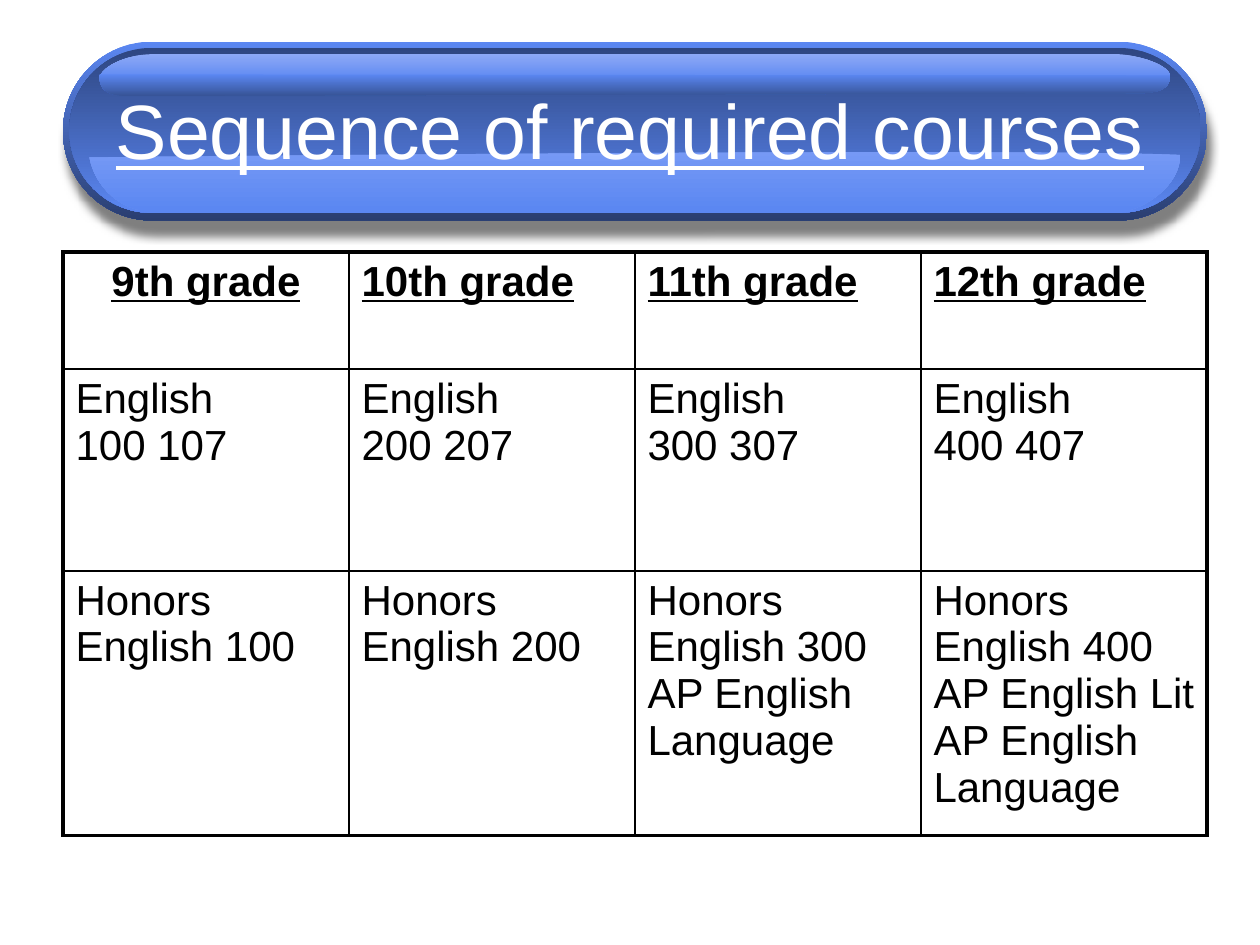
import pptx
import pptx.util
import pptx.dml.color
import pptx.enum.shapes
import pptx.enum.text
import pptx.oxml
import pptx.oxml.ns

Inches = pptx.util.Inches
Align = pptx.enum.text.PP_ALIGN
qn = pptx.oxml.ns.qn

TITLE = "Sequence of required courses"
COURSES = [
    [["9th grade"], ["10th grade"], ["11th grade"], ["12th grade"]],
    [["English", "100 107"], ["English", "200 207"],
     ["English", "300 307"], ["English", "400 407"]],
    [["Honors English 100"], ["Honors English 200"],
     ["Honors English 300", "AP English Language"],
     ["Honors English 400 AP English Lit", "AP English Language"]],
]
ROW_HEIGHTS = [0.93, 1.6, 2.1]
LEFT, TABLE_TOP, WIDTH = 0.5, 2, 9.08
CAPSULES = [
    ((LEFT, 0.33, WIDTH, 1.42), ("5B87F2", "2A3E70")),
    ((0.55, 0.38, 8.98, 1.31), ("2E4681", "5B87F2")),
]
GLOSSES = [
    (("8CA8F6", "5B87F2"), (0.79, 0.61), [
        [(0.84, 0.5), (1.05, 0.43), (1.21, 0.43)], [(8.88, 0.43)],
        [(9.03, 0.44), (9.28, 0.51), (9.29, 0.61)],
        [(7.94, 0.64), (0.79, 0.61), (0.79, 0.61)]]),
    (("5B87F2", "375497"), (0.79, 0.59), [
        [(0.78, 0.72), (0.86, 0.76), (1.02, 0.76)], [(9.06, 0.74)],
        [(9.21, 0.73), (9.28, 0.71), (9.29, 0.6)]]),
    (("789BF5", "5B87F2"), (0.71, 1.25), [
        [(0.76, 1.5), (0.97, 1.66), (1.14, 1.67)], [(8.95, 1.67)],
        [(9.1, 1.64), (9.36, 1.48), (9.37, 1.23)],
        [(8, 1.17), (0.71, 1.25), (0.71, 1.25)]]),
]


def color(value):
    return pptx.dml.color.RGBColor.from_string(value)


def xml(text):
    return pptx.oxml.parse_xml(text.replace(" ", f" {pptx.oxml.ns.nsdecls('a')} ", 1))


def paint(shape, colors):
    shape.shadow.inherit = False
    shape.line.fill.background()
    shape.fill.gradient()
    shape.fill.gradient_angle = 270
    for stop, value in zip(shape.fill.gradient_stops, colors):
        stop.color.rgb = color(value)


def cast_shadow(shape):
    effects = shape.element.spPr.find(qn("a:effectLst"))
    effects.append(xml(
        f'<a:outerShdw blurRad="{pptx.util.Pt(5)}" dist="{pptx.util.Pt(9.2)}" '
        f'dir="{77 * 60000}" algn="ctr" rotWithShape="0"><a:srgbClr val="000000">'
        '<a:alpha val="50000"/></a:srgbClr></a:outerShdw>'))


def add_curved_shape(page, start, segments):
    points = [point for segment in segments for point in segment]
    builder = page.shapes.build_freeform(*map(Inches, start))
    builder.add_line_segments([tuple(map(Inches, point)) for point in points], close=True)
    shape = builder.convert_to_shape()
    steps = iter(list(shape.element.iter(qn("a:lnTo"))))
    for segment in segments:
        members = [next(steps) for _ in segment]
        if len(members) == 3:
            curve = members[0].makeelement(qn("a:cubicBezTo"), {})
            members[0].addprevious(curve)
            for member in members:
                curve.append(member[0])
                member.getparent().remove(member)
    return shape


def write(para, text, size=24, fill="000000", bold=False, underline=False, align=Align.LEFT):
    para.alignment = align
    span = para.add_run()
    span.text = text
    span.font.name = "Arial"
    span.font.size = pptx.util.Pt(size)
    span.font.color.rgb = color(fill)
    span.font.bold = bold
    span.font.underline = underline


def add_borders(cell, outer_sides):
    properties = cell._tc.get_or_add_tcPr()
    for index, side in enumerate("LRTB"):
        width = pptx.util.Pt(2.25 if side in outer_sides else 1)
        properties.insert(index, xml(
            f'<a:ln{side} w="{width}"><a:solidFill><a:srgbClr val="000000"/>'
            f'</a:solidFill></a:ln{side}>'))


def add_banner(page):
    for number, (place, colors) in enumerate(CAPSULES):
        capsule = page.shapes.add_shape(
            pptx.enum.shapes.MSO_SHAPE.ROUNDED_RECTANGLE, *map(Inches, place))
        capsule.adjustments[0] = 0.5
        paint(capsule, colors)
        if number == 0:
            cast_shadow(capsule)
    for colors, start, segments in GLOSSES:
        paint(add_curved_shape(page, start, segments), colors)


def add_title(page):
    title = page.shapes.title
    title.left, title.top, title.width, title.height = map(Inches, (0.75, 0.4, 8.5, 1.25))
    title.text_frame.vertical_anchor = pptx.enum.text.MSO_ANCHOR.MIDDLE
    write(title.text_frame.paragraphs[0], TITLE, size=44, fill="FFFFFF",
          underline=True, align=Align.CENTER)
    title.element.getparent().append(title.element)


def add_courses(page):
    rows, columns = len(COURSES), len(COURSES[0])
    table = page.shapes.add_table(rows, columns, *map(
        Inches, (LEFT, TABLE_TOP, WIDTH, sum(ROW_HEIGHTS)))).table
    table.first_row = table.horz_banding = False
    for column in table.columns:
        column.width = Inches(WIDTH / columns)
    for r, (height, courses) in enumerate(zip(ROW_HEIGHTS, COURSES)):
        table.rows[r].height = Inches(height)
        for c, lines in enumerate(courses):
            cell = table.cell(r, c)
            cell.fill.background()
            edges = {"L": c == 0, "R": c == columns - 1, "T": r == 0, "B": r == rows - 1}
            add_borders(cell, [side for side, outer in edges.items() if outer])
            for number, line in enumerate(lines):
                frame = cell.text_frame
                para = frame.add_paragraph() if number else frame.paragraphs[0]
                write(para, line, bold=r == 0, underline=r == 0,
                      align=Align.CENTER if r == c == 0 else Align.LEFT)


def main():
    deck = pptx.Presentation()
    deck.slide_width, deck.slide_height = Inches(10), Inches(7.5)
    page = deck.slides.add_slide(deck.slide_layouts[5])
    add_banner(page)
    add_title(page)
    add_courses(page)
    deck.save("out.pptx")


if __name__ == "__main__":
    main()
